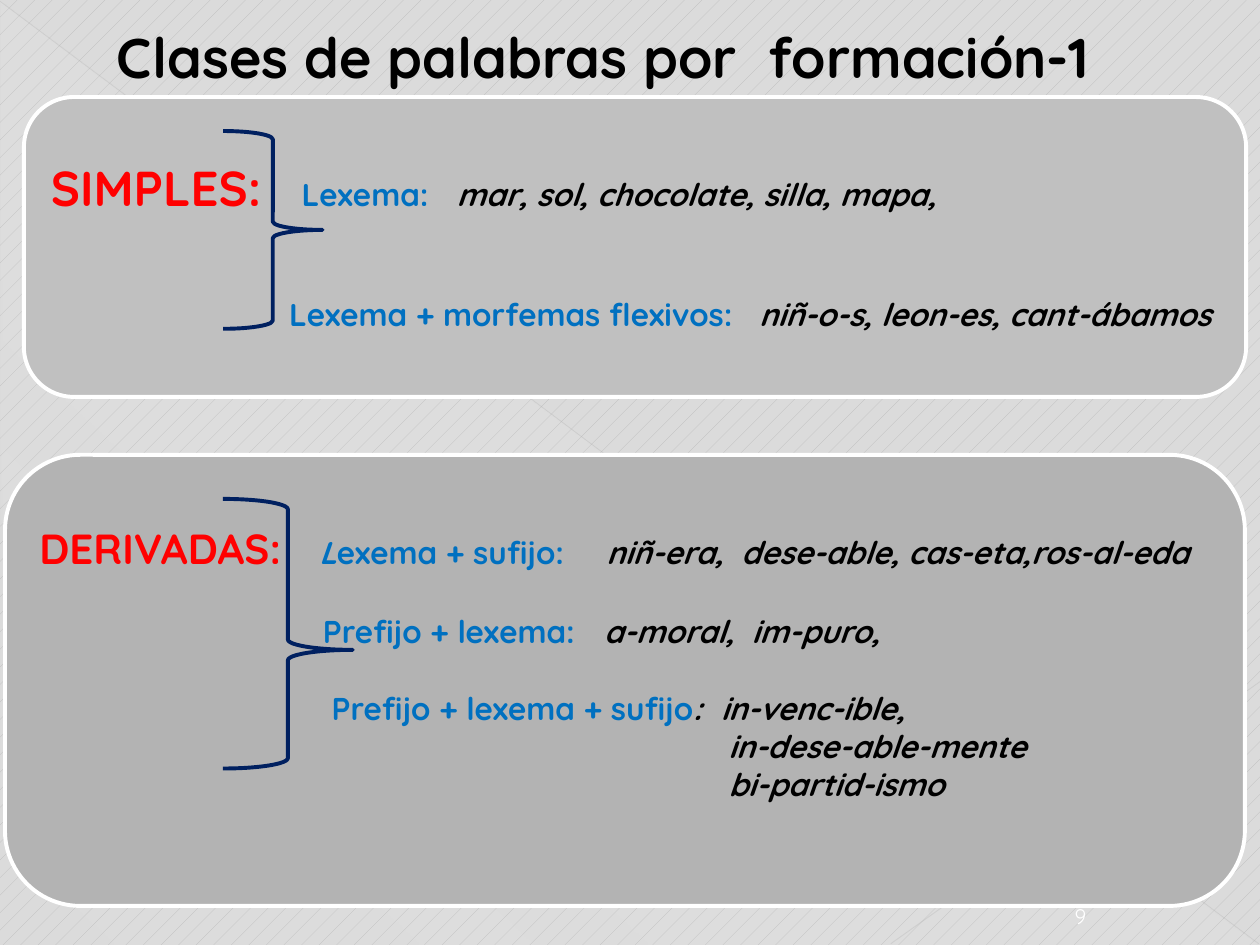
from dataclasses import dataclass

from lxml.etree import SubElement
from pptx import Presentation
from pptx.dml.color import RGBColor
from pptx.enum.dml import MSO_PATTERN
from pptx.enum.shapes import MSO_CONNECTOR, MSO_SHAPE
from pptx.enum.text import MSO_ANCHOR, PP_ALIGN
from pptx.oxml.ns import qn
from pptx.util import Inches, Pt


@dataclass(frozen=True)
class Theme:
    font: str = "Quicksand"
    black: str = "000000"
    white: str = "FFFFFF"
    red: str = "FF0000"
    blue: str = "0070C0"
    navy: str = "002060"
    simple_fill: str = "C0C0C0"
    derived_fill: str = "B3B3B3"
    pattern_fore: str = "BABABA"
    pattern_back: str = "DBDBDB"
    sheen: str = "F8F8F8"
    title: int = 32
    simple_label: int = 28
    derived_label: int = 24
    body: int = 18
    number: int = 12
    outline: float = 2.25


T = Theme()


def rgb(value):
    return RGBColor.from_string(value)


def inches(values):
    return [Inches(v) for v in values]


def add_run(p, text, size=T.body, color=T.black, bold=True, italic=False):
    r = p.add_run()
    r.text = text
    f = r.font
    f.name, f.size, f.bold, f.italic = T.font, Pt(size), bold, italic
    f.color.rgb = rgb(color)


def term(text, **style):
    return text, {"color": T.blue, **style}


def example(text):
    return text, {"italic": True}


def set_tabs(p, stops):
    tabs = SubElement(p._p.get_or_add_pPr(), qn("a:tabLst"))
    for stop in stops:
        SubElement(tabs, qn("a:tab"), pos=str(Inches(stop)), algn="l")


def add_label(s, box, text, align=PP_ALIGN.LEFT, anchor=MSO_ANCHOR.TOP, **style):
    tf = s.shapes.add_textbox(*inches(box)).text_frame
    tf.word_wrap = True
    tf.vertical_anchor = anchor
    p = tf.paragraphs[0]
    p.alignment = align
    add_run(p, text, **style)


def add_outlined(s, kind, box, line, fill=None):
    sp = s.shapes.add_shape(kind, *inches(box))
    sp.shadow.inherit = False
    if fill:
        sp.fill.solid()
        sp.fill.fore_color.rgb = rgb(fill)
    else:
        sp.fill.background()
    sp.line.color.rgb = rgb(line)
    sp.line.width = Pt(T.outline)
    return sp


def add_panel(s, box, fill, rows):
    """Each row is (points before, tab stops, runs)."""
    sp = add_outlined(s, MSO_SHAPE.ROUNDED_RECTANGLE, box, T.white, fill)
    tf = sp.text_frame
    tf.word_wrap = True
    tf.vertical_anchor = MSO_ANCHOR.TOP
    tf.margin_top, tf.margin_right = Inches(0.36), 0
    for i, (before, stops, runs) in enumerate(rows):
        p = tf.add_paragraph() if i else tf.paragraphs[0]
        p.alignment = PP_ALIGN.LEFT
        p.space_before = Pt(before)
        set_tabs(p, stops)
        for text, style in runs:
            add_run(p, text, **style)


def add_brace(s, box, adjustments=()):
    sp = add_outlined(s, MSO_SHAPE.RIGHT_BRACE, box, T.navy)
    for i, value in enumerate(adjustments):
        sp.adjustments[i] = value


def add_alpha(color, percent):
    SubElement(color, qn("a:alpha"), val=str(percent * 1000))


def add_sheen(s):
    sp = s.shapes.add_shape(MSO_SHAPE.RIGHT_TRIANGLE, *inches((0.01, 0.02, 9.98, 7.48)))
    sp.shadow.inherit = False
    sp.line.fill.background()
    sp.fill.gradient()
    grad = sp._element.spPr.find(qn("a:gradFill"))
    for child in list(grad):
        grad.remove(child)
    stops = SubElement(grad, qn("a:gsLst"))
    for pos, alpha in ((0, 10), (70, 8), (100, 1)):
        stop = SubElement(stops, qn("a:gs"), pos=str(pos * 1000))
        add_alpha(SubElement(stop, qn("a:srgbClr"), val=T.sheen), alpha)
    SubElement(grad, qn("a:lin"), ang=str(133 * 60000), scaled="0")


def add_line(s, ends, color, width, alpha):
    c = s.shapes.add_connector(MSO_CONNECTOR.STRAIGHT, *inches(ends))
    c.line.color.rgb = rgb(color)
    c.line.width = Pt(width)
    spPr = c._element.spPr
    add_alpha(next(spPr.iter(qn("a:srgbClr"))), alpha)
    SubElement(spPr, qn("a:effectLst"))


def add_background(s):
    fill = s.background.fill
    fill.patterned()
    fill.pattern = MSO_PATTERN.PERCENT_5
    fill.fore_color.rgb = rgb(T.pattern_fore)
    fill.back_color.rgb = rgb(T.pattern_back)
    add_sheen(s)
    add_line(s, (0, 0.01, 9.99, 7.49), "B4B4B4", 0.39, 35)
    add_line(s, (10, 5.41, 7.07, 7.49), "BDBDBD", 0.47, 45)


def main():
    prs = Presentation()
    prs.slide_width, prs.slide_height = Inches(10), Inches(7.5)
    s = prs.slides.add_slide(prs.slide_layouts[6])
    add_background(s)

    # Slide number and title
    add_label(s, (8.3, 7.09, 0.55, 0.33), "9", align=PP_ALIGN.CENTER,
              anchor=MSO_ANCHOR.BOTTOM, size=T.number, color=T.white, bold=False)
    add_label(s, (0.83, 0.13, 8.43, 0.64), "Clases de palabras por  formación-1",
              size=T.title)

    # Simple words
    add_panel(s, (0.19, 0.77, 9.7, 2.38), T.simple_fill, [
        (0, (1.99, 3.22), [
            term("SIMPLES:", size=T.simple_label, color=T.red),
            term("\tLexema:"),
            example("\tmar, sol, chocolate, silla, mapa,")]),
        (45, (1.89, 5.62), [
            term("\tLexema + morfemas flexivos:"),
            example("\tniñ-o-s, leon-es, cant-ábamos")]),
    ])
    add_brace(s, (1.77, 1.04, 0.79, 1.57))

    # Derived words
    add_panel(s, (0.04, 3.61, 9.84, 3.58), T.derived_fill, [
        (0, (2.22, 4.5), [
            term("DERIVADAS:", size=T.derived_label, color=T.red),
            term("\tL", italic=True), term("exema + sufijo:"),
            example("\tniñ-era,  dese-able, cas-eta,ros-al-eda")]),
        (22.5, (2.25, 4.48), [
            term("\tPrefijo + lexema:"), example("\ta-moral,  im-puro,")]),
        (22.5, (2.32, 5.41), [
            term("\tPrefijo + lexema + sufijo"), example(":\tin-venc-ible,")]),
        (0, (5.47,), [example("\tin-dese-able-mente")]),
        (0, (5.47,), [example("\tbi-partid-ismo")]),
    ])
    add_brace(s, (1.77, 3.96, 1.03, 2.14), (0.08, 0.56))

    prs.save("out.pptx")


if __name__ == "__main__":
    main()
